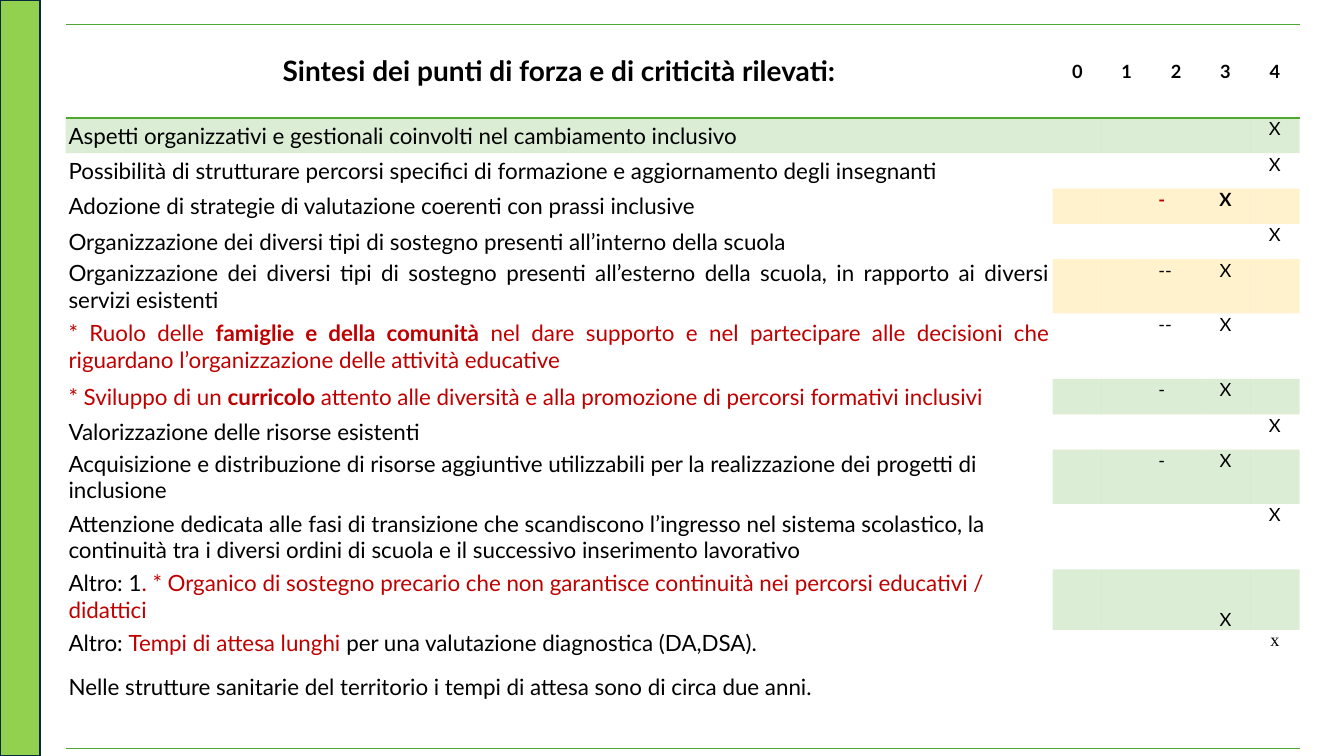
from dataclasses import dataclass, field
from typing import Optional

from lxml.etree import SubElement
from pptx import Presentation
from pptx.dml.color import RGBColor
from pptx.enum.shapes import MSO_SHAPE
from pptx.enum.text import MSO_ANCHOR, PP_ALIGN
from pptx.oxml import parse_xml
from pptx.oxml.ns import nsdecls, qn
from pptx.util import Inches, Pt

BLACK = RGBColor(0x00, 0x00, 0x00)
RED = RGBColor(0xC0, 0x00, 0x00)
GREEN = RGBColor(0x4E, 0xA7, 0x2E)
YELLOW = RGBColor(0xFF, 0xC0, 0x00)
LIME = RGBColor(0x92, 0xD0, 0x50)
NAVY = RGBColor(0x09, 0x2A, 0x39)

GRID_COLUMNS, GRID_ROWS = 1333, 750
PLAIN_TABLE_STYLE = "{2D5ABB26-0587-4C30-8999-92F81FD0307C}"
CRITERION_SIZE, MARK_SIZE, TITLE_SIZE = 16, 13, 20
JUSTIFIED = PP_ALIGN.JUSTIFY
CENTERED = PP_ALIGN.CENTER
LEFT = PP_ALIGN.LEFT


@dataclass
class Criterion:
    """One row: its height in grid rows, its paragraphs of runs and its rating."""
    height: int
    paragraphs: list
    score: int = 4
    minus: str = ""
    tint: Optional[RGBColor] = None
    tint_label: bool = False
    alignment: PP_ALIGN = LEFT
    anchor: MSO_ANCHOR = MSO_ANCHOR.MIDDLE
    mark: str = "X"
    mark_format: dict = field(default_factory=dict)
    minus_format: dict = field(default_factory=dict)
    mark_anchor: MSO_ANCHOR = MSO_ANCHOR.TOP


def red(text, bold=False):
    return text, {"color": RED, "bold": bold}


def black(text):
    return text, {}


CRITERIA = [
    Criterion(35, [[black("Aspetti organizzativi e gestionali coinvolti nel cambiamento inclusivo")]],
              tint=GREEN, tint_label=True, alignment=JUSTIFIED),
    Criterion(35, [[black("Possibilità di strutturare percorsi specifici di formazione e "
                          "aggiornamento degli insegnanti")]], alignment=JUSTIFIED),
    Criterion(35, [[black("Adozione di strategie di valutazione coerenti con prassi inclusive")]],
              score=3, minus="-", tint=YELLOW, alignment=JUSTIFIED,
              mark_format={"bold": True}, minus_format={"bold": True, "color": RED}),
    Criterion(35, [[black("Organizzazione dei diversi tipi di sostegno presenti all’interno "
                          "della scuola")]], alignment=JUSTIFIED),
    Criterion(54, [[black("Organizzazione dei diversi tipi di sostegno presenti all’esterno "
                          "della scuola, in rapporto ai diversi servizi esistenti")]],
              score=3, minus="--", tint=YELLOW, alignment=JUSTIFIED),
    Criterion(65, [[red("* Ruolo delle "), red("famiglie e della comunità ", bold=True),
                    red("nel dare supporto e nel partecipare alle decisioni che riguardano "
                        "l’organizzazione delle attività educative")]],
              score=3, minus="--", alignment=JUSTIFIED),
    Criterion(35, [[red("* Sviluppo di un "), red("curricolo", bold=True),
                    red(" attento alle diversità e alla promozione di percorsi formativi inclusivi")]],
              score=3, minus="-", tint=GREEN, alignment=JUSTIFIED),
    Criterion(35, [[black("Valorizzazione delle risorse esistenti")]]),
    Criterion(54, [[black("Acquisizione e distribuzione di risorse aggiuntive utilizzabili per "
                          "la realizzazione dei progetti di inclusione")]],
              score=3, minus="-", tint=GREEN),
    Criterion(65, [[black("Attenzione dedicata alle fasi di transizione che scandiscono l’ingresso "
                          "nel sistema scolastico, la continuità tra i diversi ordini di scuola e "
                          "il successivo inserimento lavorativo")]]),
    Criterion(60, [[black("Altro: 1"),
                    red(". * Organico di sostegno precario che non garantisce continuità nei "
                        "percorsi educativi / didattici")]],
              score=3, tint=GREEN, anchor=MSO_ANCHOR.TOP, mark_anchor=MSO_ANCHOR.BOTTOM),
    Criterion(118, [[black("Altro: "), red("Tempi di attesa lunghi "),
                     black("per una valutazione diagnostica (DA,DSA).")],
                    [black("Nelle strutture sanitarie del territorio i tempi di attesa sono "
                           "di circa due anni.")]],
              anchor=MSO_ANCHOR.TOP, mark="x", mark_format={"font": "Times New Roman"}),
]


def add_text(paragraph, text, size=CRITERION_SIZE, bold=False, color=BLACK, font="Lato"):
    run = paragraph.add_run()
    run.text = text
    run.font.size = Pt(size)
    run.font.bold = bold
    run.font.color.rgb = color
    run.font.name = font


def tint_cell(cell, color):
    """Fill the cell with the colour at 20 % opacity."""
    cell.fill.solid()
    cell.fill.fore_color.rgb = color
    color_element = cell._tc.tcPr.find(qn("a:solidFill"))[0]
    SubElement(color_element, qn("a:alpha"), val="20000")


def rule_cell(cell, sides):
    """Draw a thin green border on each named side, in the order lnT, lnB."""
    for position, side in enumerate(sides):
        cell._tc.get_or_add_tcPr().insert(position, parse_xml(
            f'<a:{side} {nsdecls("a")} w="{Pt(1)}"><a:solidFill>'
            f'<a:srgbClr val="{GREEN}"/></a:solidFill></a:{side}>'))


class SlideBuilder:
    def __init__(self, presentation):
        self.column = presentation.slide_width / GRID_COLUMNS
        self.row = presentation.slide_height / GRID_ROWS
        self.slide = presentation.slides.add_slide(presentation.slide_layouts[6])

    def box(self, left, top, width, height):
        return (round(left * self.column), round(top * self.row),
                round(width * self.column), round(height * self.row))

    def bar(self, *place):
        shape = self.slide.shapes.add_shape(MSO_SHAPE.RECTANGLE, *self.box(*place))
        shape.shadow.inherit = False
        shape.fill.solid()
        shape.fill.fore_color.rgb = LIME
        shape.line.color.rgb = NAVY
        shape.line.width = Pt(1.5)

    def table(self, left, top, widths, heights):
        place = self.box(left, top, sum(widths), sum(heights))
        frame = self.slide.shapes.add_table(len(heights), len(widths), *place)
        table = frame.table
        table.first_row = table.horz_banding = False
        table._tbl.tblPr.find(qn("a:tableStyleId")).text = PLAIN_TABLE_STYLE
        for column, width in zip(table.columns, widths):
            column.width = round(width * self.column)
        for row, height in zip(table.rows, heights):
            row.height = round(height * self.row)
        for cell in table.iter_cells():
            cell.margin_left = cell.margin_right = Inches(0.03)
            cell.margin_top = cell.margin_bottom = 0
            cell.fill.background()
        return table

    def fill_cell(self, cell, paragraphs, alignment=CENTERED, anchor=MSO_ANCHOR.MIDDLE, **style):
        """Write paragraphs, each a list of (text, format) runs, over a shared style."""
        cell.vertical_anchor = anchor
        for index, runs in enumerate(paragraphs):
            paragraph = cell.text_frame.add_paragraph() if index else cell.text_frame.paragraphs[0]
            paragraph.alignment = alignment
            if index < len(paragraphs) - 1:
                paragraph.space_after = Pt(12)
            for text, run_format in runs:
                add_text(paragraph, text, **{**style, **run_format})

    def criterion_row(self, table, row, criterion):
        cells = list(table.rows[row].cells)
        self.fill_cell(cells[0], criterion.paragraphs, criterion.alignment, criterion.anchor)
        self.fill_cell(cells[criterion.score + 1], [[(criterion.mark, criterion.mark_format)]],
                       anchor=criterion.mark_anchor, size=MARK_SIZE)
        if criterion.minus:
            cells[3].margin_left = Inches(0.07)
            self.fill_cell(cells[3], [[(criterion.minus, criterion.minus_format)]],
                           LEFT, MSO_ANCHOR.TOP, size=MARK_SIZE)
        if criterion.tint:
            for cell in cells if criterion.tint_label else cells[1:]:
                tint_cell(cell, criterion.tint)


def main():
    presentation = Presentation()
    presentation.slide_width, presentation.slide_height = Inches(13.33), Inches(7.5)
    builder = SlideBuilder(presentation)

    heights = [93] + [criterion.height for criterion in CRITERIA]
    table = builder.table(65, 24, [979] + [49] * 5, heights)
    header = list(table.rows[0].cells)
    builder.fill_cell(header[0], [[black("Sintesi dei punti di forza e di criticità rilevati:")]],
                      size=TITLE_SIZE, bold=True)
    for score, cell in enumerate(header[1:]):
        builder.fill_cell(cell, [[black(str(score))]], size=MARK_SIZE, bold=True)
    for row, criterion in enumerate(CRITERIA, start=1):
        builder.criterion_row(table, row, criterion)
    for cell in header:
        rule_cell(cell, ["lnT", "lnB"])
    for cell in table.rows[len(CRITERIA)].cells:
        rule_cell(cell, ["lnB"])

    builder.bar(0, 0, 40, 750)
    presentation.save("out.pptx")


if __name__ == "__main__":
    main()
